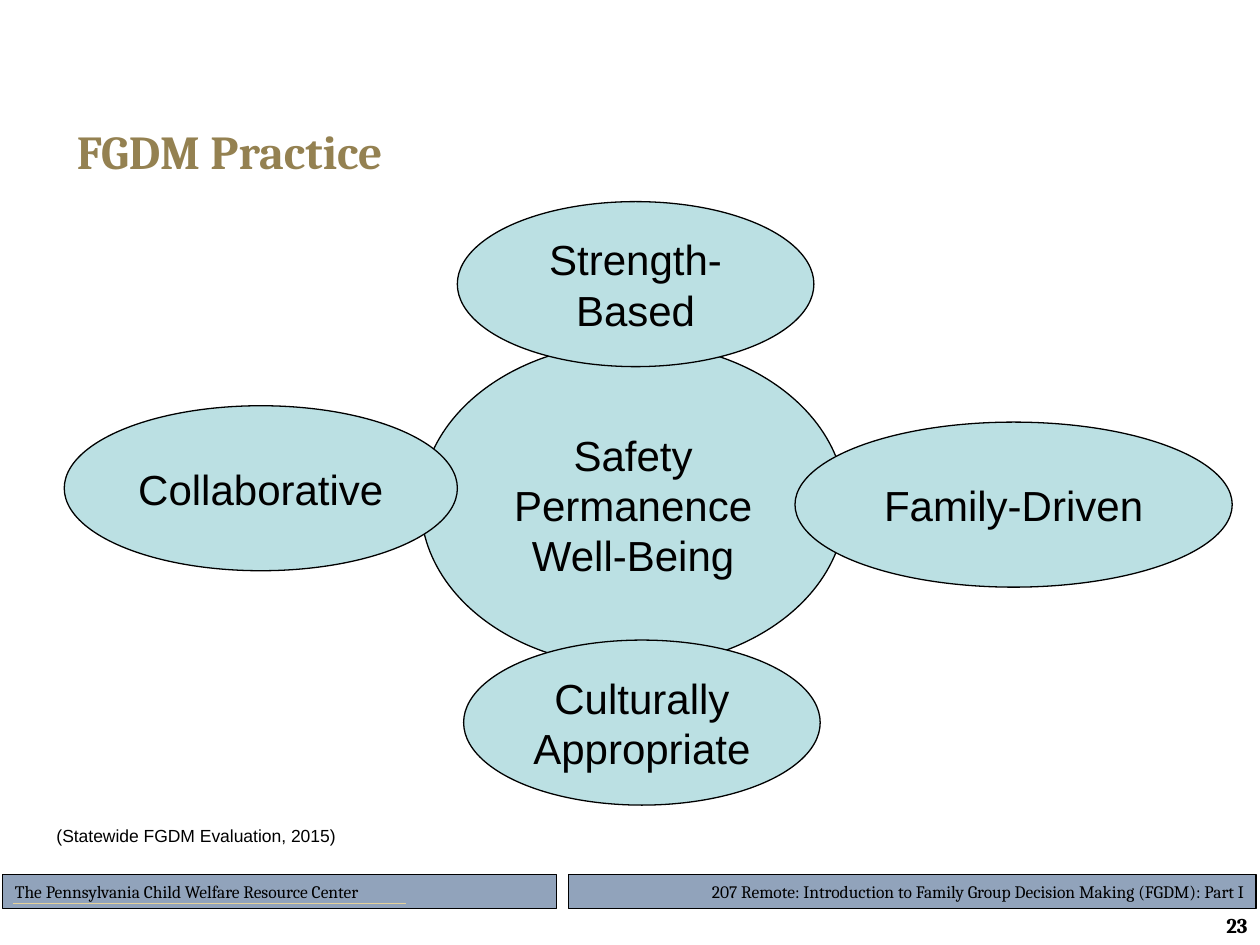
from lxml.etree import SubElement
from pptx import Presentation
from pptx.dml.color import RGBColor
from pptx.enum.shapes import MSO_CONNECTOR, MSO_SHAPE
from pptx.enum.text import MSO_ANCHOR, MSO_AUTO_SIZE, PP_ALIGN
from pptx.oxml.ns import qn
from pptx.util import Inches, Pt

BLACK = RGBColor(0x00, 0x00, 0x00)
GOLD = RGBColor(0x94, 0x81, 0x51)
PALE_GOLD = RGBColor(0xE5, 0xD1, 0x99)
SLATE = RGBColor(0x91, 0xA3, 0xBB)
AQUA = RGBColor(0xBB, 0xE0, 0xE3)

OVAL_HEIGHT = 1.31
FOOTER_TOP, FOOTER_HEIGHT = 6.94, 0.27


def write(sp, text, size, font="Arial", color=BLACK, bold=False,
          align=PP_ALIGN.LEFT, anchor=MSO_ANCHOR.MIDDLE):
    """Fill a shape with text, one paragraph per line."""
    tf = sp.text_frame
    tf.word_wrap = True
    tf.auto_size = MSO_AUTO_SIZE.NONE
    tf.vertical_anchor = anchor
    tf.text = text
    for p in tf.paragraphs:
        p.alignment = align
        for r in p.runs:
            r.font.size = Pt(size)
            r.font.name = font
            r.font.bold = bold
            r.font.color.rgb = color


def add_box(slide, kind, box, fill, line_width=0.75):
    sp = slide.shapes.add_shape(kind, *map(Inches, box))
    sp.shadow.inherit = False
    sp.fill.solid()
    sp.fill.fore_color.rgb = fill
    sp.line.color.rgb = BLACK
    sp.line.width = Pt(line_width)
    return sp


def add_oval(slide, text, left, top, width, height=OVAL_HEIGHT):
    sp = add_box(slide, MSO_SHAPE.OVAL, (left, top, width, height), AQUA)
    write(sp, text, 24, align=PP_ALIGN.CENTER)


def add_footer_bar(slide, text, left, width, align, line_width):
    box = (left, FOOTER_TOP, width, FOOTER_HEIGHT)
    sp = add_box(slide, MSO_SHAPE.RECTANGLE, box, SLATE, line_width)
    write(sp, text, 10, font="Cambria", align=align)


def add_rule(slide, left, right, y):
    line = slide.shapes.add_connector(
        MSO_CONNECTOR.STRAIGHT, Inches(left), Inches(y), Inches(right), Inches(y))
    line.line.color.rgb = PALE_GOLD
    line.line.width = Pt(0.75)
    SubElement(line._element.spPr, qn("a:effectLst"))


def add_label(slide, text, box, size, **style):
    sp = slide.shapes.add_textbox(*map(Inches, box))
    write(sp, text, size, **style)


def set_title(slide, text):
    title = slide.shapes.title
    title.left, title.top = Inches(0.51), Inches(0.87)
    title.width, title.height = Inches(9), Inches(0.65)
    write(title, text, 27, font="Cambria", color=GOLD, bold=True)


def main():
    prs = Presentation()
    prs.slide_width, prs.slide_height = Inches(10), Inches(7.5)
    slide = prs.slides.add_slide(prs.slide_layouts[5])

    add_footer_bar(
        slide, "207 Remote: Introduction to Family Group Decision Making (FGDM): Part I",
        4.51, 5.46, PP_ALIGN.RIGHT, 0.75)
    add_footer_bar(slide, "The Pennsylvania Child Welfare Resource Center",
                   0.02, 4.4, PP_ALIGN.LEFT, 0.5)
    add_rule(slide, 0.1, 3.22, 7.17)
    set_title(slide, "FGDM Practice")
    add_label(slide, "23", (8.89, 7.24, 1.11, 0.21), 12,
              font="Cambria", bold=True, align=PP_ALIGN.RIGHT)

    add_oval(slide, "Safety\nPermanence\nWell-Being", 3.34, 2.72, 3.37, 2.57)
    for text, left, top, width in (
        ("Strength-Based", 3.63, 1.6, 2.83),
        ("Culturally Appropriate", 3.68, 5.08, 2.83),
        ("Family-Driven", 6.31, 3.35, 3.47),
        ("Collaborative", 0.51, 3.22, 3.12),
    ):
        add_oval(slide, text, left, top, width)

    add_label(slide, "(Statewide FGDM Evaluation, 2015)", (0.35, 6.5, 4.67, 0.27), 10,
              anchor=MSO_ANCHOR.TOP)
    prs.save("out.pptx")


if __name__ == "__main__":
    main()
